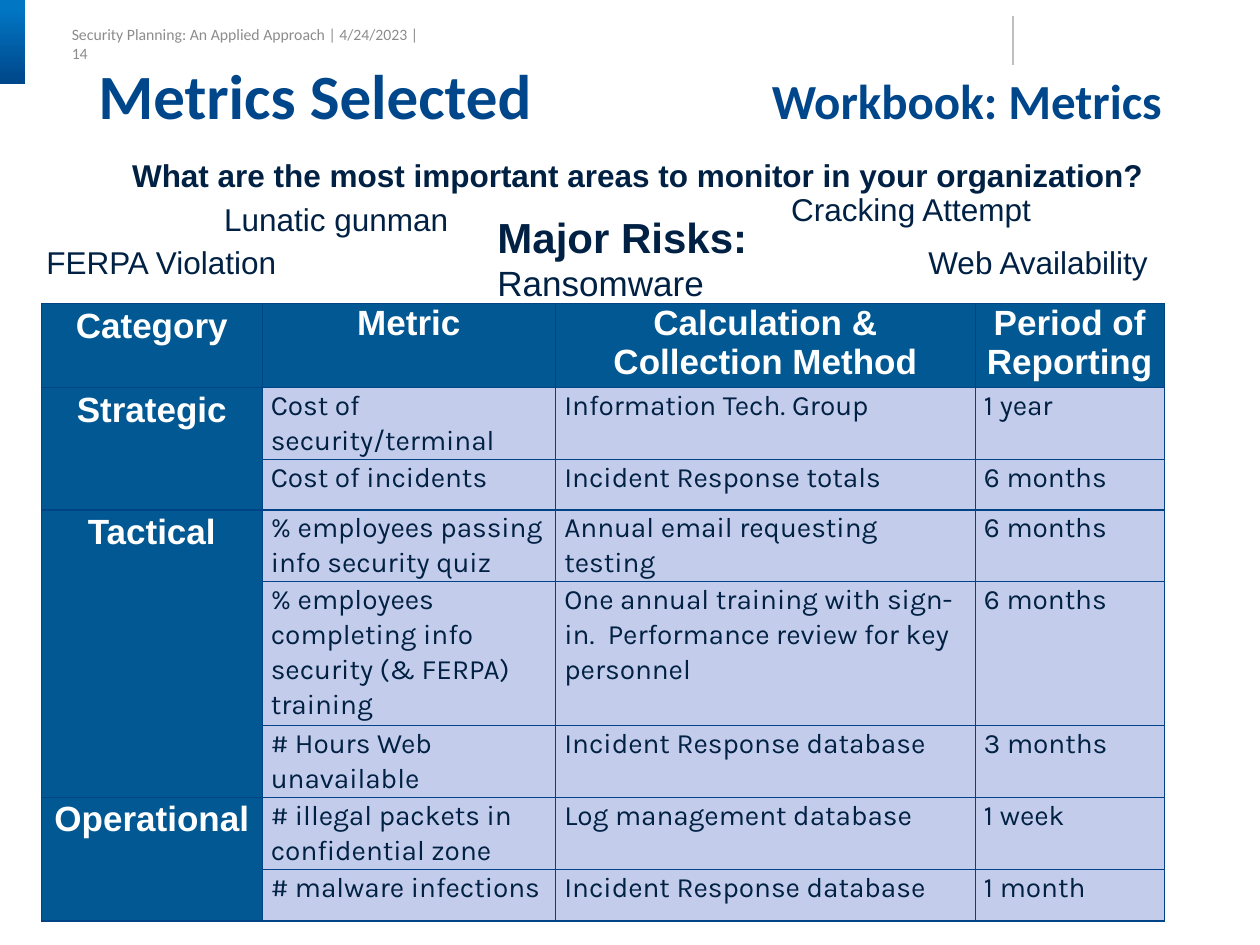
import pptx
import pptx.util
import pptx.dml.color
import pptx.enum.shapes
import pptx.enum.text
import pptx.oxml
from pptx.oxml.ns import nsdecls

Inches, Pt = pptx.util.Inches, pptx.util.Pt
ALIGN = pptx.enum.text.PP_ALIGN
ANCHOR = pptx.enum.text.MSO_ANCHOR

BLUE, NAVY, HEADER, BODY, BORDER = "00468A", "002143", "015892", "C4CCEB", "004487"

HEADINGS = ["Category", "Metric", "Calculation & Collection Method", "Period of\nReporting"]
METRICS = {
    "Strategic": [
        ("Cost of security/terminal", "Information Tech. Group", "1 year"),
        ("Cost of incidents", "Incident Response totals", "6 months"),
    ],
    "Tactical": [
        ("% employees passing info security quiz", "Annual email requesting testing", "6 months"),
        ("% employees completing info security (& FERPA) training",
         "One annual training with sign-in.  Performance review for key personnel", "6 months"),
        ("# Hours Web unavailable", "Incident Response database", "3 months"),
    ],
    "Operational": [
        ("# illegal packets in confidential zone", "Log management database", "1 week"),
        ("# malware infections", "Incident Response database", "1 month"),
    ],
}
COLUMN_WIDTHS = [1.75, 2.33, 3.33, 1.5]
ROW_HEIGHTS = [0.63, 0.56, 0.4, 0.56, 1.11, 0.56, 0.56, 0.41]
RISKS = [
    ("FERPA Violation", (0.27, 1.88, 2.06, 0.4)),
    ("Cracking Attempt", (6.18, 1.46, 2.12, 0.4)),
    ("Web Availability", (7.27, 1.88, 1.97, 0.4)),
    ("Lunatic gunman", (1.68, 1.54, 1.98, 0.4)),
]


def rgb(value):
    return pptx.dml.color.RGBColor.from_string(value)


def inches(box):
    return [Inches(v) for v in box]


def xml(text):
    return pptx.oxml.parse_xml(text)


def style(item, size, color, font="Arial", bold=False):
    """Format the font of a run or of all runs in a paragraph."""
    for r in getattr(item, "runs", [item]):
        r.font.name, r.font.size, r.font.bold = font, Pt(size), bold
        r.font.color.rgb = rgb(color)


def set_margins(tf, left=0, top=0, right=0, bottom=0):
    tf.margin_left, tf.margin_top, tf.margin_right, tf.margin_bottom = inches(
        (left, top, right, bottom))


def add_label(slide, box, text, size=18, bold=False):
    tf = slide.shapes.add_textbox(*inches(box)).text_frame
    tf.word_wrap = False
    tf.text = text
    for p in tf.paragraphs:
        style(p, size, NAVY, bold=bold)
    return tf


def add_page_frame(slide):
    """Running header, corner accent and divider along the top edge."""
    tf = add_label(slide, (0.57, 0.23, 2.84, 0.23),
                   "Security Planning: An Applied Approach | 4/24/2023 | 14")
    set_margins(tf)
    tf.vertical_anchor = ANCHOR.MIDDLE
    style(tf.paragraphs[0], 9, "8C8C8C", "Calibri")

    accent = slide.shapes.add_shape(
        pptx.enum.shapes.MSO_SHAPE.RECTANGLE, *inches((0, 0, 0.2, 0.67)))
    accent.shadow.inherit = False
    accent.line.fill.background()
    accent.fill.gradient()
    accent.fill.gradient_angle = 270
    for stop, position, color in zip(accent.fill.gradient_stops, (0.1, 1), ("0176C3", BLUE)):
        stop.position = position
        stop.color.rgb = rgb(color)

    divider = slide.shapes.add_connector(
        pptx.enum.shapes.MSO_CONNECTOR.STRAIGHT, *inches((8.04, 0.13, 8.04, 0.52)))
    divider.line.color.rgb = rgb("BFBFBF")
    divider.line.width = Pt(0.75)
    divider._element.spPr.append(xml(f"<a:effectLst {nsdecls('a')}/>"))


def set_title(slide, box, left, right):
    """Title with one part at the left and one against a right tab."""
    title = slide.shapes.title
    title.left, title.top, title.width, title.height = inches(box)
    side = 0.28
    tf = title.text_frame
    set_margins(tf, left=side)
    tf.auto_size = pptx.enum.text.MSO_AUTO_SIZE.NONE
    tf.vertical_anchor = ANCHOR.TOP
    p = tf.paragraphs[0]
    p.alignment = ALIGN.LEFT
    p.line_spacing = 0.9
    tab = Inches(box[2] - 2 * side)
    p._p.get_or_add_pPr().append(
        xml(f'<a:tabLst {nsdecls("a")}><a:tab pos="{tab}" algn="r"/></a:tabLst>'))
    for text, size in ((left + "\t", 36), (right, 28)):
        r = p.add_run()
        r.text = text
        style(r, size, BLUE, "Calibri", True)


def add_risks(slide):
    add_label(slide, (0.95, 1.19, 8.3, 0.4),
              "What are the most important areas to monitor in your organization?", bold=True)
    tf = add_label(slide, (3.85, 1.63, 2.2, 0.84), "Major Risks:\nRansomware", 20)
    style(tf.paragraphs[0], 24, NAVY, bold=True)
    for text, box in RISKS:
        add_label(slide, box, text)


def add_borders(cell):
    tcPr = cell._tc.get_or_add_tcPr()
    for i, side in enumerate(("lnL", "lnR", "lnT", "lnB")):
        tcPr.insert(i, xml(
            f'<a:{side} {nsdecls("a")} w="{Pt(0.75)}"><a:solidFill>'
            f'<a:srgbClr val="{BORDER}"/></a:solidFill></a:{side}>'))


def fill_cell(cell, text, heading=False, spacing=1.07):
    set_margins(cell, left=0.07, right=0.07)
    cell.text_frame.text = text
    for p in cell.text_frame.paragraphs:
        p.line_spacing = spacing
        if heading:
            p.alignment = ALIGN.CENTER
            style(p, 20, "FFFFFF", bold=True)
        else:
            style(p, 16, NAVY, "Karla")


def add_metrics_table(slide, box):
    frame = slide.shapes.add_table(len(ROW_HEIGHTS), len(COLUMN_WIDTHS), *inches(box))
    table = frame.table
    table.horz_banding = False
    for column, width in zip(table.columns, COLUMN_WIDTHS):
        column.width = Inches(width)
    for row, height in zip(table.rows, ROW_HEIGHTS):
        row.height = Inches(height)

    for i in range(len(ROW_HEIGHTS)):
        for j in range(len(COLUMN_WIDTHS)):
            cell = table.cell(i, j)
            cell.fill.solid()
            cell.fill.fore_color.rgb = rgb(HEADER if i == 0 or j == 0 else BODY)
            add_borders(cell)

    for j, text in enumerate(HEADINGS):
        fill_cell(table.cell(0, j), text, heading=True, spacing=1.07 if j == 0 else 1.0)
    first = 1
    for category, metrics in METRICS.items():
        table.cell(first, 0).merge(table.cell(first + len(metrics) - 1, 0))
        fill_cell(table.cell(first, 0), category, heading=True)
        for i, metric in enumerate(metrics, first):
            for j, text in enumerate(metric, 1):
                fill_cell(table.cell(i, j), text)
        first += len(metrics)


def main():
    prs = pptx.Presentation()
    prs.slide_width, prs.slide_height = inches((10, 7.5))
    slide = prs.slides.add_slide(prs.slide_layouts[5])
    add_page_frame(slide)
    set_title(slide, (0.5, 0.52, 9, 0.55), "Metrics Selected", "Workbook: Metrics")
    add_metrics_table(slide, (0.33, 2.41, sum(COLUMN_WIDTHS), sum(ROW_HEIGHTS)))
    add_risks(slide)
    prs.save("out.pptx")


if __name__ == "__main__":
    main()
